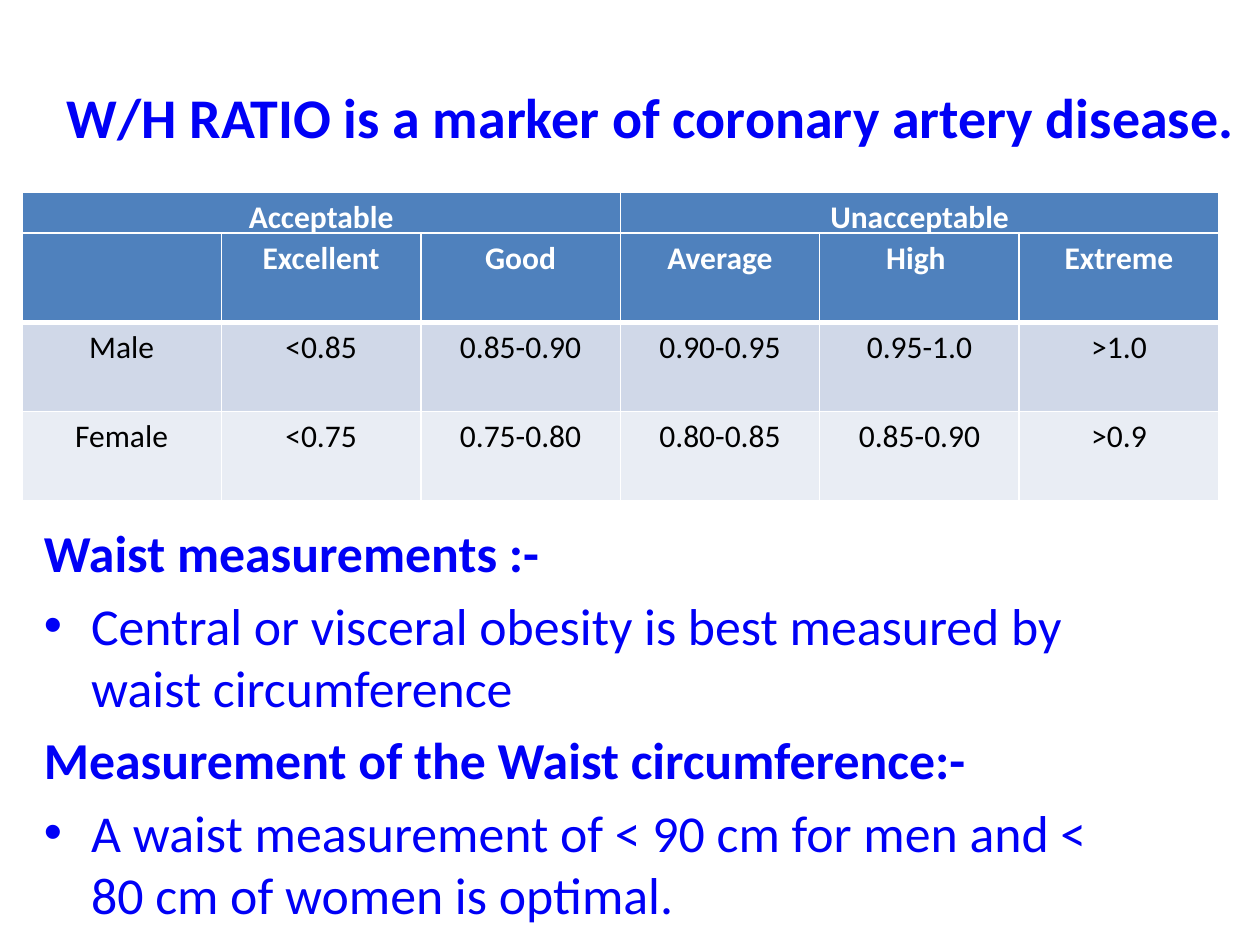
from lxml.etree import SubElement
from pptx import Presentation
from pptx.dml.color import RGBColor
from pptx.enum.text import MSO_ANCHOR, PP_ALIGN
from pptx.oxml.ns import qn
from pptx.util import Pt

BLUE, WHITE, BLACK = "0000F6", "FFFFFF", "000000"
HEAD, MALE, FEMALE = "4F81BD", "D0D8E8", "E9EDF4"

GROUPS = [["Acceptable", "Unacceptable"]]
RATIOS = [
    ["", "Excellent", "Good", "Average", "High ", "Extreme"],
    ["Male", "<0.85", "0.85-0.90", "0.90-0.95", "0.95-1.0", ">1.0"],
    ["Female", "<0.75", "0.75-0.80", "0.80-0.85", "0.85-0.90", ">0.9"],
]
NOTES = [
    ("Waist measurements :-", True),
    ("Central or visceral obesity is best measured by waist circumference", False),
    ("Measurement of the Waist circumference:-", True),
    ("A waist measurement of < 90 cm for men and < 80 cm of women is optimal.", False),
]


def color(code):
    return RGBColor.from_string(code)


def add_run(para, text, size, code, bold):
    run = para.add_run()
    run.text = text
    font = run.font
    font.name, font.size, font.bold = "Calibri", Pt(size), bold
    font.color.rgb = color(code)


def add_box(slide, box):
    frame = slide.shapes.add_textbox(*map(Pt, box)).text_frame
    frame.word_wrap = True
    return frame


def add_title(slide, box, text):
    frame = add_box(slide, box)
    frame.vertical_anchor = MSO_ANCHOR.MIDDLE
    para = frame.paragraphs[0]
    para.alignment = PP_ALIGN.CENTER
    add_run(para, text, 32, BLUE, True)


def set_indent(para, bullet):
    """Hang the paragraph by 27 pt, with or without a bullet."""
    props = para._p.get_or_add_pPr()
    props.set("marL", str(Pt(27)))
    props.set("indent", str(-Pt(27)))
    if bullet:
        SubElement(props, qn("a:buFont"), typeface="Arial")
        SubElement(props, qn("a:buChar"), char="•")
    else:
        SubElement(props, qn("a:buNone"))


def add_notes(slide, box, notes):
    frame = add_box(slide, box)
    for i, (text, bold) in enumerate(notes):
        para = frame.paragraphs[0] if i == 0 else frame.add_paragraph()
        para.space_before = Pt(6)
        set_indent(para, not bold)
        add_run(para, text, 29.6, BLUE, bold)


def set_edges(cell, base):
    """Draw white borders, 1 pt wide except for the base."""
    props = cell._tc.get_or_add_tcPr()
    for i, (side, width) in enumerate(zip("LRTB", (1, 1, 1, base))):
        line = props.makeelement(qn(f"a:ln{side}"), {"w": str(Pt(width))})
        fill = SubElement(line, qn("a:solidFill"))
        SubElement(fill, qn("a:srgbClr"), val=WHITE)
        props.insert(i, line)


def add_grid(slide, box, rows):
    """Place a table with equal rows and columns; its first row is the head."""
    table = slide.shapes.add_table(len(rows), len(rows[0]), *map(Pt, box)).table
    for col in table.columns:
        col.width = Pt(box[2] / len(rows[0]))
    for r, (row, fill) in enumerate(zip(rows, (HEAD, MALE, FEMALE))):
        table.rows[r].height = Pt(box[3] / len(rows))
        for c, text in enumerate(row):
            cell = table.cell(r, c)
            cell.fill.solid()
            cell.fill.fore_color.rgb = color(fill)
            set_edges(cell, 3 if r == 0 else 1)
            para = cell.text_frame.paragraphs[0]
            para.alignment = PP_ALIGN.CENTER
            if text:
                add_run(para, text, 18, BLACK if r else WHITE, r == 0)


def main():
    deck = Presentation()
    deck.slide_width, deck.slide_height = Pt(720), Pt(540)
    slide = deck.slides.add_slide(deck.slide_layouts[6])
    add_title(slide, (0, 21.6, 744, 90),
              "W/H RATIO is a marker of coronary artery disease.")
    add_notes(slide, (18, 294, 612, 230), NOTES)
    add_grid(slide, (12.5, 110, 684, 29.5), GROUPS)
    add_grid(slide, (12.5, 133.2, 684, 153), RATIOS)
    deck.save("out.pptx")


if __name__ == "__main__":
    main()
